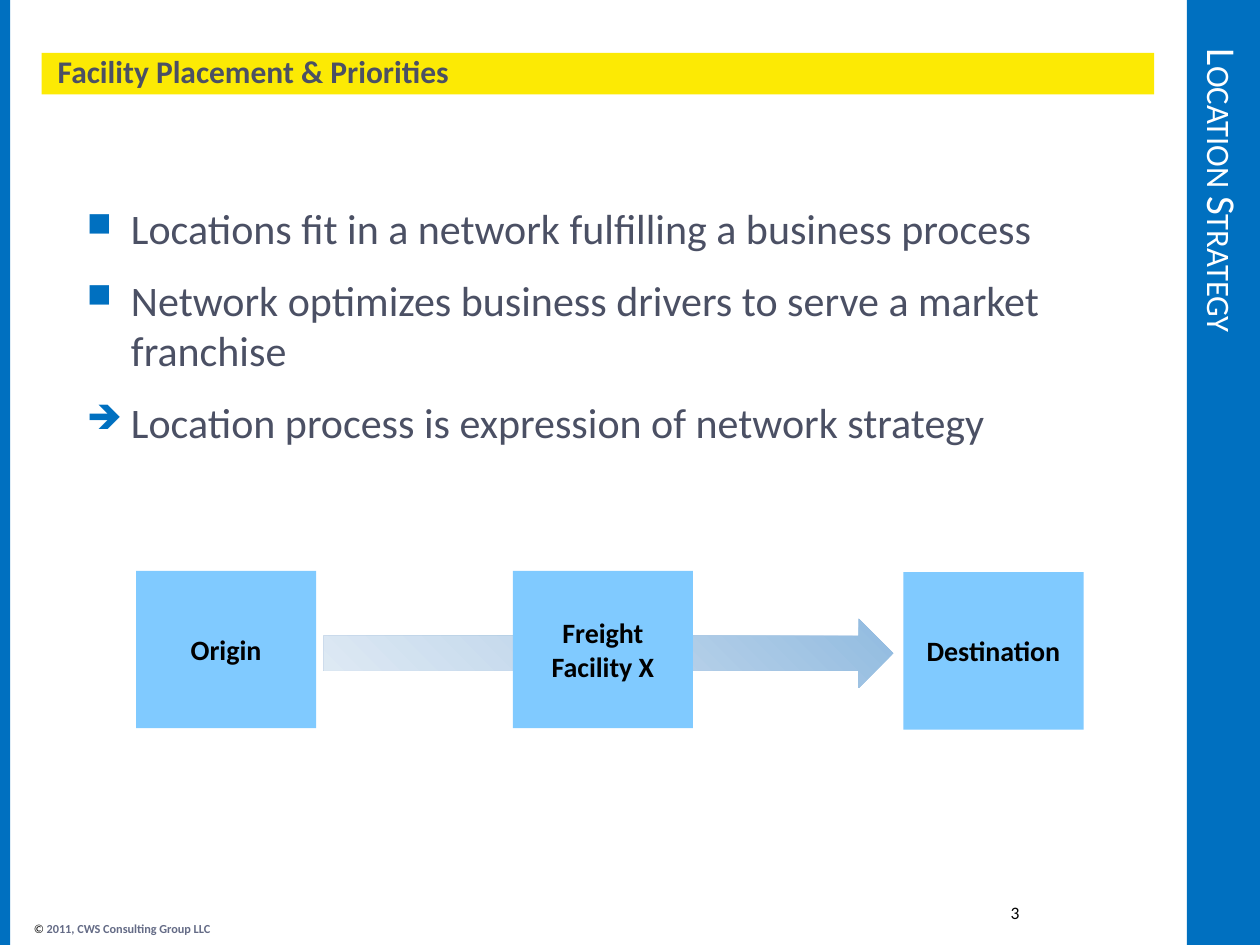
from lxml.etree import SubElement
from pptx import Presentation
from pptx.dml.color import RGBColor
from pptx.enum.shapes import MSO_SHAPE as Shape
from pptx.enum.text import MSO_ANCHOR as Anchor, PP_ALIGN as Align
from pptx.oxml import parse_xml
from pptx.oxml.ns import nsdecls, qn
from pptx.util import Inches, Pt

WIDTH, HEIGHT = 10, 7.5
FONT = "Calibri"
BLUE, YELLOW, SKY, SLATE = "0070C0", "FCEA04", "80CAFF", "4B5064"
SIDEBAR_LEFT = 9.42
BANDS = [
    ((SIDEBAR_LEFT, 0, WIDTH - SIDEBAR_LEFT, HEIGHT), BLUE),
    ((0, 0, 0.08, HEIGHT), BLUE),
    ((0.33, 0.42, 8.83, 0.33), YELLOW),
]
TITLE = "Facility Placement & Priorities"
BULLETS = [
    ("■", "Locations fit in a network fulfilling a business process"),
    ("■", "Network optimizes business drivers to serve a market franchise"),
    ("➔", "Location process is expression of network strategy"),
]
BOX_WIDTH, BOX_HEIGHT = 1.43, 1.25
STAGES = [
    ("Origin", 1.08, 4.53),
    ("Destination", 7.17, 4.54),
    ("Freight Facility X", 4.07, 4.53),
]
ARROW_STOPS = [(0, "91BBE0"), (50, "BDD4EA"), (100, "DFEAF4")]
ARROW_ANGLE = 135


def color(value):
    return RGBColor.from_string(value)


def add_block(slide, place, fill=None, kind=Shape.RECTANGLE):
    shape = slide.shapes.add_shape(kind, *map(Inches, place))
    shape.shadow.inherit = False
    shape.line.fill.background()
    if fill:
        shape.fill.solid()
        shape.fill.fore_color.rgb = color(fill)
    return shape


def add_label(slide, place, anchor=Anchor.TOP):
    box = slide.shapes.add_textbox(*map(Inches, place))
    box.text_frame.word_wrap = True
    box.text_frame.vertical_anchor = anchor
    return box.text_frame


def add_run(paragraph, text, size, fill, bold=False):
    run = paragraph.add_run()
    run.text = text
    run.font.name, run.font.size, run.font.bold = FONT, Pt(size), bold
    run.font.color.rgb = color(fill)
    return run


def add_boxed_text(slide, place, fill, align, text, size, text_color):
    frame = add_block(slide, place, fill).text_frame
    frame.word_wrap = True
    frame.vertical_anchor = Anchor.MIDDLE
    frame.paragraphs[0].alignment = align
    add_run(frame.paragraphs[0], text, size, text_color, bold=True)


def add_arrow(slide):
    arrow = add_block(slide, (2.57, 4.91, 4.52, 0.55), kind=Shape.RIGHT_ARROW)
    stops = "".join(
        f'<a:gs pos="{share * 1000}"><a:srgbClr val="{value}"/></a:gs>'
        for share, value in ARROW_STOPS
    )
    gradient = parse_xml(
        f'<a:gradFill {nsdecls("a")}><a:gsLst>{stops}</a:gsLst>'
        f'<a:lin ang="{ARROW_ANGLE * 60000}" scaled="0"/></a:gradFill>'
    )
    arrow._element.spPr.find(qn("a:prstGeom")).addnext(gradient)


def set_bullet(paragraph, mark):
    properties = paragraph._p.get_or_add_pPr()
    properties.set("marL", str(Inches(0.48)))
    properties.set("indent", str(Inches(-0.35)))
    SubElement(SubElement(properties, qn("a:buClr")), qn("a:srgbClr")).set("val", BLUE)
    SubElement(properties, qn("a:buSzPct")).set("val", "80000")
    SubElement(properties, qn("a:buChar")).set("char", mark)


def add_bullets(slide):
    frame = add_label(slide, (0.5, 1.51, 9, 5.66))
    frame.margin_left, frame.margin_top = Inches(0.06), Inches(0.1)
    for index, (mark, text) in enumerate(BULLETS):
        paragraph = frame.add_paragraph() if index else frame.paragraphs[0]
        set_bullet(paragraph, mark)
        paragraph.space_before = Pt(6 if index else 0)
        paragraph.space_after = Pt(6)
        add_run(paragraph, text, 24, SLATE)


def add_footer(slide):
    notice = add_label(slide, (0.17, 7.26, 3.58, 0.22)).paragraphs[0]
    add_run(notice, "©", 7, "000000")
    add_run(notice, " 2011, CWS Consulting Group LLC", 7, "646B86", bold=True)
    number = add_label(slide, (7.11, 7.08, 1.08, 0.33), Anchor.MIDDLE).paragraphs[0]
    number.alignment = Align.RIGHT
    add_run(number, "3", 10, "000000")


def add_sidebar_text(slide):
    place = (SIDEBAR_LEFT, 0.29, WIDTH - SIDEBAR_LEFT, 6.79)
    frame = add_label(slide, place, Anchor.MIDDLE)
    frame._txBody.bodyPr.set("vert", "vert")
    run = add_run(frame.paragraphs[0], "Location Strategy", 23.4, "FFFFFF")
    run._r.get_or_add_rPr().set("cap", "small")


def main():
    """Build the facility placement slide and save it."""
    presentation = Presentation()
    presentation.slide_width, presentation.slide_height = Inches(WIDTH), Inches(HEIGHT)
    slide = presentation.slides.add_slide(presentation.slide_layouts[6])
    for place, fill in BANDS:
        add_block(slide, place, fill)
    add_arrow(slide)
    add_boxed_text(slide, (0.36, 0.44, 5.63, 0.25), YELLOW, Align.LEFT, TITLE, 18, SLATE)
    add_bullets(slide)
    for text, left, top in STAGES:
        place = (left, top, BOX_WIDTH, BOX_HEIGHT)
        add_boxed_text(slide, place, SKY, Align.CENTER, text, 16, "000000")
    add_footer(slide)
    add_sidebar_text(slide)
    presentation.save("out.pptx")


if __name__ == "__main__":
    main()
